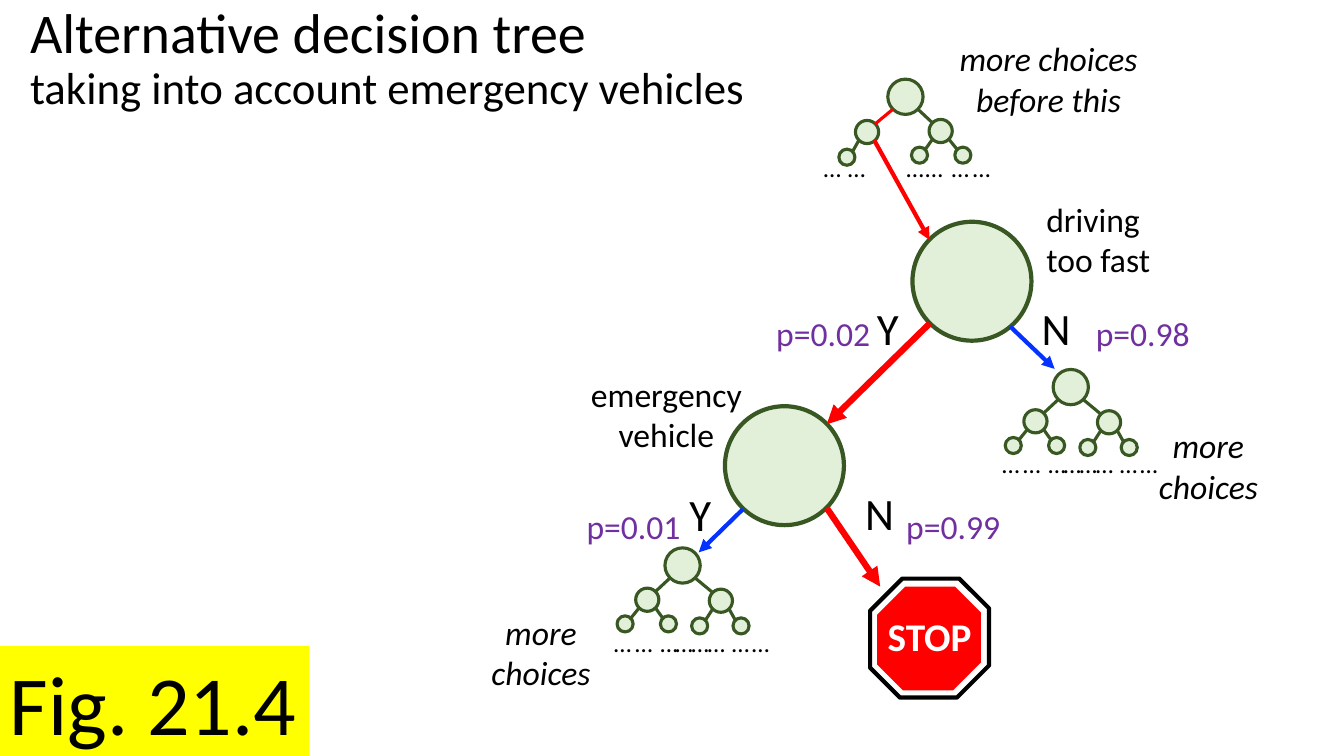
"""Build a slide with a decision tree for stopping that accounts for emergency vehicles."""
from dataclasses import dataclass
from math import sqrt

from pptx import Presentation
from pptx.dml.color import RGBColor
from pptx.enum.shapes import MSO_CONNECTOR, MSO_SHAPE
from pptx.enum.text import MSO_ANCHOR, PP_ALIGN
from pptx.oxml.ns import qn
from pptx.util import Inches, Pt
from lxml import etree

LEFT, CENTER = PP_ALIGN.LEFT, PP_ALIGN.CENTER
TOP = MSO_ANCHOR.TOP
ELLIPSE, SIGN = MSO_SHAPE.OVAL, MSO_SHAPE.SNIP_2_DIAG_RECTANGLE
STRAIGHT = MSO_CONNECTOR.STRAIGHT


@dataclass(frozen=True)
class Theme:
    font: str = "Calibri"
    black: str = "000000"
    white: str = "FFFFFF"
    node: str = "E2F0D9"
    outline: str = "385723"
    red: str = "FF0000"
    blue: str = "0432FF"
    purple: str = "7030A0"
    yellow: str = "FFFF00"
    figure: int = 60
    title: int = 40
    branch: int = 32
    stop: int = 28
    label: int = 24
    dots: int = 18


theme = Theme()
deck = Presentation()
deck.slide_width, deck.slide_height = Inches(13.33), Inches(7.5)
slide = deck.slides.add_slide(deck.slide_layouts[6])
shapes = slide.shapes


def write(text, box, size, color=theme.black, align=CENTER, italic=False, bold=False, wrap=True):
    textbox = shapes.add_textbox(*map(Inches, box))
    frame = textbox.text_frame
    frame.word_wrap = wrap
    frame.vertical_anchor = TOP
    paragraph = frame.paragraphs[0]
    paragraph.text = text
    paragraph.alignment = align
    for run in paragraph.runs:
        run.font.name = theme.font
        run.font.size = Pt(size)
        run.font.color.rgb = RGBColor.from_string(color)
        run.font.italic, run.font.bold = italic, bold
    return textbox


def link(start, end, color, width, arrow=False):
    connector = shapes.add_connector(STRAIGHT, *map(Inches, (*start, *end)))
    connector.line.color.rgb = RGBColor.from_string(color)
    connector.line.width = Pt(width)
    if arrow:
        etree.SubElement(connector.line._get_or_add_ln(), qn("a:tailEnd"), type="triangle")
    etree.SubElement(connector._element.spPr, qn("a:effectLst"))


subtree_nodes = [
    (0, 0, 0.35),
    (-0.35, 0.34, 0.23), (0.38, 0.35, 0.23),
    (-0.57, 0.58, 0.16), (-0.14, 0.58, 0.16),
    (0.58, 0.6, 0.16), (0.17, 0.6, 0.16),
]
subtree_edges = [(0, 1), (0, 2), (1, 3), (1, 4), (2, 5), (2, 6)]
later_dots = [-0.78, -0.57, -0.32, -0.17, -0.01, 0.15, 0.39, 0.59]
earlier_dots = [-0.91, -0.67, -0.09, 0.1, 0.36, 0.57]
subtrees = [
    (10.62, 3.84, 1, 7, later_dots, 0.56, None),
    (6.77, 5.61, 1, 7, later_dots, 0.56, None),
    (8.98, 0.96, -1, 6, earlier_dots, 0.5, (0, 2)),
]

circles = [(9.64, 2.79, 1.18, 3), (7.78, 4.62, 1.18, 3)]
branches = []
for root_x, root_y, side, node_count, dots, dots_drop, chosen_edge in subtrees:
    nodes = [(root_x + side * x, root_y + y, d) for x, y, d in subtree_nodes[:node_count]]
    circles += [(*node, 2.25) for node in nodes]
    for parent, child in subtree_edges[:node_count - 1]:
        (px, py, pd), (cx, cy, cd) = nodes[parent], nodes[child]
        toward = 1 if cx > px else -1
        leave, reach = pd / sqrt(8), cd / sqrt(8)
        color = theme.red if (parent, child) == chosen_edge else theme.outline
        branches.append(((px + toward * leave, py + leave),
                         (cx - toward * reach, cy - reach), color, 2.25))
    for dot_x in dots:
        ellipsis = write("…", (root_x + dot_x, root_y + dots_drop, 0.22, 0.24), theme.dots, align=LEFT)
        ellipsis.text_frame.margin_right = 0

for x, y, diameter, width in circles:
    circle = shapes.add_shape(ELLIPSE, Inches(x - diameter / 2), Inches(y - diameter / 2),
                              Inches(diameter), Inches(diameter))
    circle.shadow.inherit = False
    circle.fill.solid()
    circle.fill.fore_color.rgb = RGBColor.from_string(theme.node)
    circle.line.color.rgb = RGBColor.from_string(theme.outline)
    circle.line.width = Pt(width)

for branch in branches:
    link(*branch)

for x, y, size, color, border in [(8.63, 5.74, 1.18, theme.white, theme.black),
                                  (8.7, 5.82, 1.03, theme.red, None)]:
    sign = shapes.add_shape(SIGN, *map(Inches, (x, y, size, size)))
    sign.adjustments[0], sign.adjustments[1] = 0.27, 0.25
    sign.shadow.inherit = False
    sign.fill.solid()
    sign.fill.fore_color.rgb = RGBColor.from_string(color)
    if border:
        sign.line.color.rgb = RGBColor.from_string(border)
        sign.line.width = Pt(3)
    else:
        sign.line.fill.background()
write("STOP", (8.6, 6.03, 1.24, 0.57), theme.stop, theme.white, bold=True)

for start, end, color, width in [
    ((8.67, 1.39), (9.22, 2.38), theme.red, 3),
    ((9.22, 3.21), (8.2, 4.21), theme.red, 4.5),
    ((10.02, 3.24), (10.46, 3.66), theme.blue, 3),
    ((8.2, 5.04), (8.73, 5.82), theme.red, 4.5),
    ((7.37, 5.05), (6.93, 5.48), theme.blue, 3),
]:
    link(start, end, color, width, arrow=True)

for answer, x, y in [("Y", 8.45, 2.93), ("N", 10.12, 2.93), ("Y", 6.59, 4.78), ("N", 8.37, 4.77)]:
    write(answer, (x, y, 0.71, 0.64), theme.branch)

for probability, x, y in [("p=0.02", 7.6, 3.06), ("p=0.98", 10.77, 3.06),
                          ("p=0.01", 5.72, 4.97), ("p=0.99", 8.89, 4.97)]:
    write(probability, (x, y, 1.37, 0.5), theme.label, theme.purple, LEFT)

write("driving\vtoo fast", (10.28, 1.92, 1.37, 0.91), theme.label, align=LEFT)
write("emergency vehicle", (5.63, 3.66, 1.96, 0.91), theme.label)
for choices, x, y, width in [("more choices\vbefore this", 9.38, 0.33, 2.04),
                             ("more\vchoices", 11.3, 4.17, 1.37),
                             ("more\vchoices", 4.68, 6.02, 1.37)]:
    write(choices, (x, y, width, 0.91), theme.label, italic=True)

figure_number = write("Fig. 21.4", (0, 6.41, 3.07, 1.11), theme.figure, align=LEFT, wrap=False)
figure_number.fill.solid()
figure_number.fill.fore_color.rgb = RGBColor.from_string(theme.yellow)

title = write("Alternative decision tree\vtaking into account emergency vehicles",
              (0.2, 0, 12.93, 1.78), theme.title, align=LEFT)
heading = title.text_frame.paragraphs[0]
heading.line_spacing = 0.9
heading.runs[1].font.size = Pt(theme.branch)

deck.save("out.pptx")
